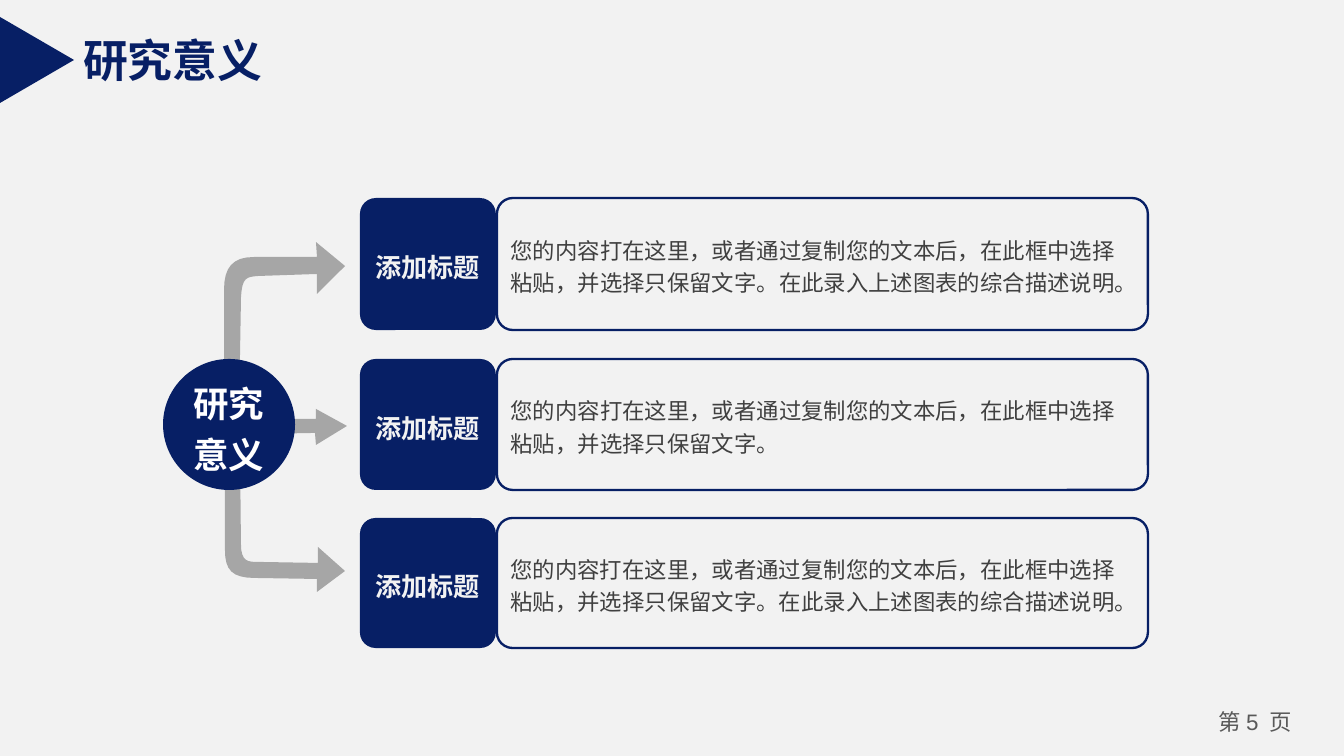
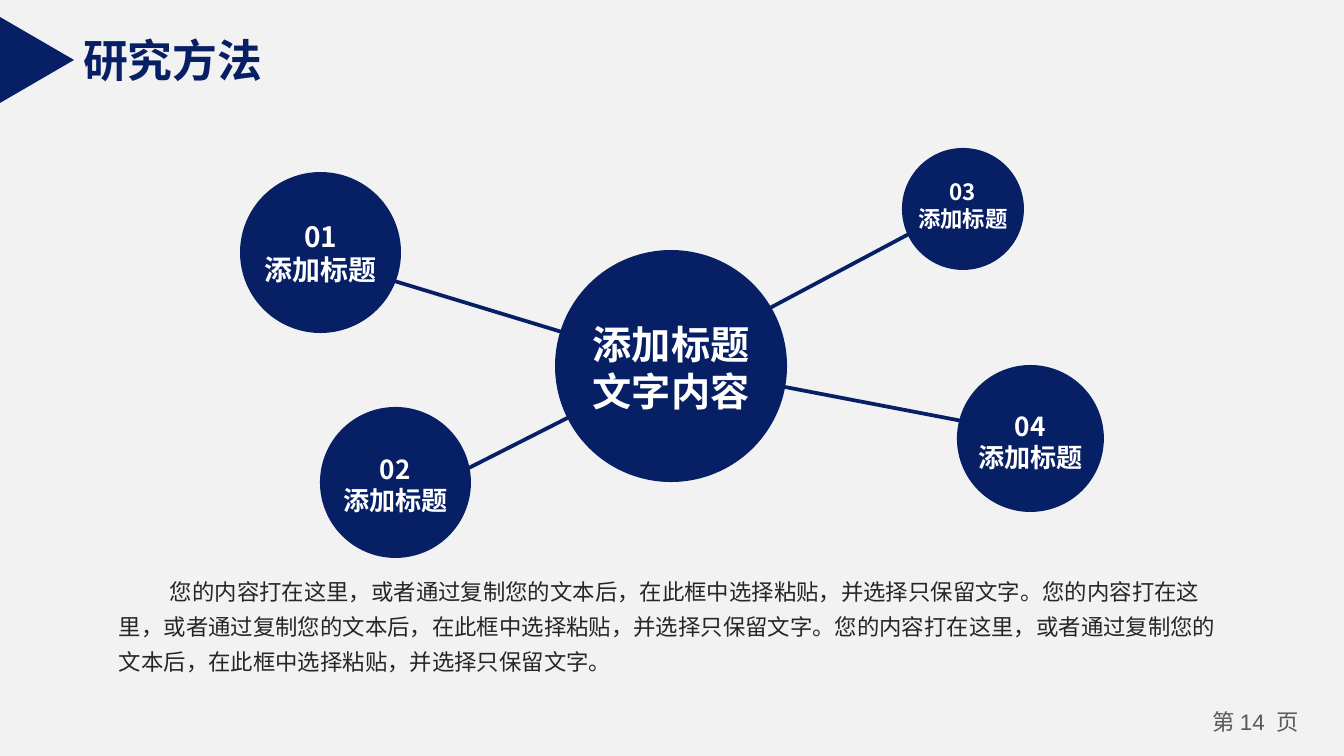
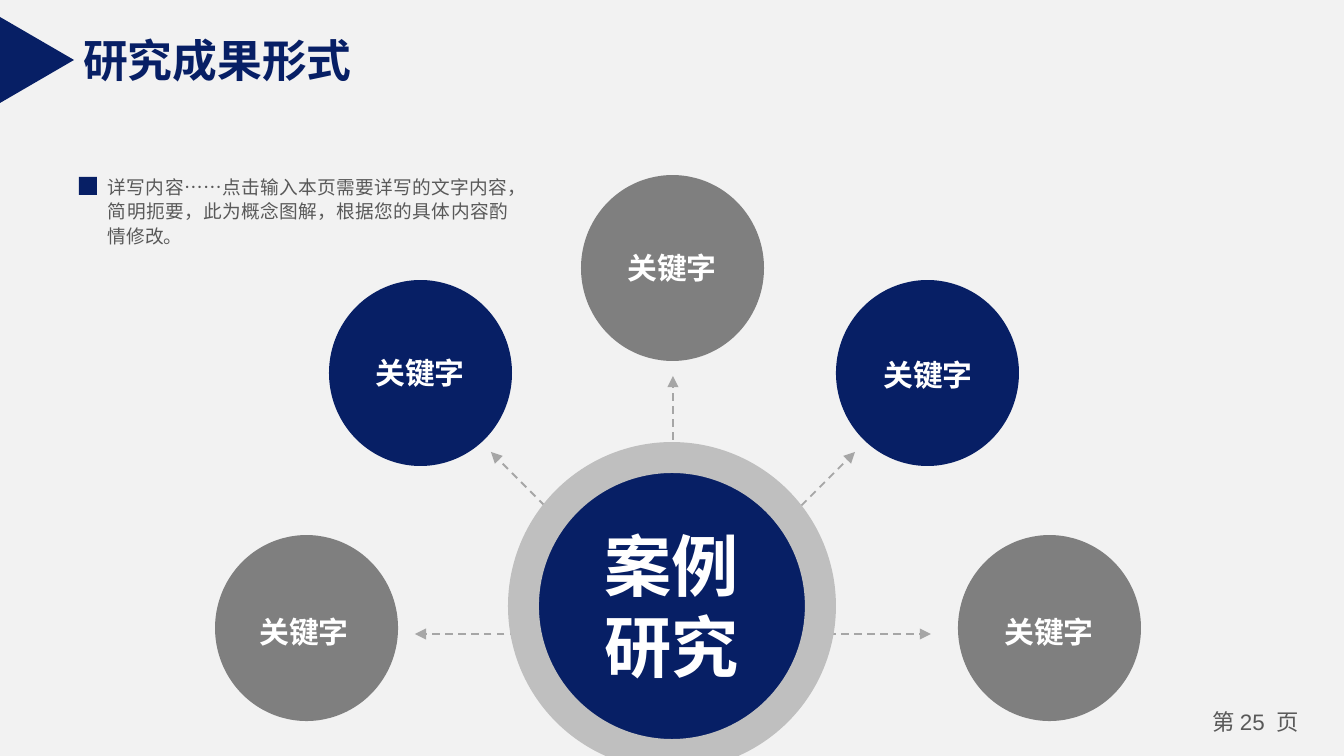
from dataclasses import dataclass

from lxml.etree import SubElement
from pptx import Presentation
from pptx.dml.color import RGBColor
from pptx.enum.dml import MSO_LINE
from pptx.enum.shapes import MSO_CONNECTOR, MSO_SHAPE
from pptx.enum.text import MSO_ANCHOR, MSO_AUTO_SIZE, PP_ALIGN
from pptx.oxml.ns import qn
from pptx.util import Pt

PX = 6804  # EMU in one px


@dataclass(frozen=True)
class Theme:
    navy = RGBColor.from_string("071F65")
    paper = RGBColor.from_string("F2F2F2")
    white = RGBColor.from_string("FFFFFF")
    ring = RGBColor.from_string("BFBFBF")
    arrow = RGBColor.from_string("A6A6A6")
    gray = RGBColor.from_string("7F7F7F")
    note = RGBColor.from_string("595959")
    body = RGBColor.from_string("404040")
    ink = RGBColor.from_string("262626")
    sans = "Noto Sans CJK SC"
    latin = "Arial"
    title = 24
    small = 10
    text = 12
    tag = 14
    topic = 15
    key = 16
    core = 19
    hub = 21
    big = 36


T = Theme()


def draw(slide, kind, box, fill=None, line=None):
    """Add a preset shape, or a text box when kind is None."""
    left, top, width, height = (n * PX for n in box)
    if kind is None:
        return slide.shapes.add_textbox(left, top, width, height)
    shape = slide.shapes.add_shape(kind, left, top, width, height)
    shape.shadow.inherit = False
    if fill is None:
        shape.fill.background()
    else:
        shape.fill.solid()
        shape.fill.fore_color.rgb = fill
    if line is None:
        shape.line.fill.background()
    else:
        shape.line.color.rgb = line
        shape.line.width = Pt(1.25)
    return shape


def write(shape, text, size, color, bold=False, align=PP_ALIGN.CENTER, space=1.0,
          font=T.sans, pad=(9, 4), wrap=True, anchor=MSO_ANCHOR.MIDDLE):
    frame = shape.text_frame
    frame.text = text
    frame.word_wrap = wrap
    frame.auto_size = MSO_AUTO_SIZE.NONE
    frame.vertical_anchor = anchor
    frame.margin_left = frame.margin_right = pad[0] * PX
    frame.margin_top = frame.margin_bottom = pad[1] * PX
    for para in frame.paragraphs:
        para.alignment = align
        para.line_spacing = space
        para.font.size = Pt(size)
        para.font.bold = bold
        para.font.color.rgb = color
        para.font.name = font
        props = para._p.pPr.find(qn("a:defRPr"))
        SubElement(props, qn("a:ea"), typeface=T.sans)
    return frame.paragraphs[0]


prs = Presentation()
prs.slide_width, prs.slide_height = 1344 * PX, 756 * PX
back = prs.slide_master.background.fill
back.solid()
back.fore_color.rgb = T.paper
layout = prs.slide_layouts[5]
head = layout.placeholders[0]
head.left, head.top, head.width, head.height = 70 * PX, 26 * PX, 300 * PX, 67 * PX

# Title, marker and page number of every slide
slides = []
for name, page in (("研究意义", 5), ("研究方法", 14), ("研究成果形式", 25)):
    slide = prs.slides.add_slide(layout)
    slides.append(slide)
    write(slide.shapes.title, name, T.title, T.navy, True, PP_ALIGN.LEFT,
          font=T.latin, pad=(13, 7), wrap=False)
    mark = draw(slide, MSO_SHAPE.ISOSCELES_TRIANGLE, (-6, 23, 86, 74), T.navy)
    mark.rotation = 90
    foot = write(draw(slide, None, (1195, 704, 121, 40)), "第 ", T.text, T.note,
                 anchor=MSO_ANCHOR.TOP)
    digits = foot.add_run()
    digits.text = f"{page} "
    digits.font.name = T.latin
    foot.add_run().text = " 页"
means, ways, fruits = slides

# Lines of the second and third slides, behind their circles
spokes = [(368, 273, 667, 364), (453, 476, 668, 367),
          (659, 367, 939, 218), (665, 364, 1030, 434)]
rays = [(673, 634, x, y) for x, y in
        ((415, 634), (931, 634), (673, 376), (491, 452), (855, 452))]
for slide, ends, color, width, dashed in ((ways, spokes, T.navy, 2, False),
                                          (fruits, rays, T.arrow, 1, True)):
    for end in ends:
        link = slide.shapes.add_connector(MSO_CONNECTOR.STRAIGHT, *(n * PX for n in end))
        link.line.color.rgb = color
        link.line.width = Pt(width)
        if dashed:
            link.line.dash_style = MSO_LINE.DASH
            SubElement(link.line._get_or_add_ln(), qn("a:tailEnd"), type="triangle")
        SubElement(link._element.spPr, qn("a:effectLst"))

# Slide 1: arrows; a step of two numbers is a corner, of six a Bezier curve
down = [(240, 445), (241, 544), (241, 562, 248, 562, 259, 562), (318, 563), (318, 547),
        (345, 571), (317, 592), (317, 579), (255, 578), (232, 578, 225, 570, 225, 550),
        (225, 442), (226, 425, 236, 426, 240, 445)]
ahead = [(203, 435), (315, 433), (316, 445), (347, 426), (316, 409), (316, 419), (203, 419)]
up = [(239, 413), (241, 297), (242, 277, 247, 277, 258, 276), (317, 274), (317, 294),
      (345, 266), (316, 242), (317, 257), (254, 257), (233, 257, 224, 267, 224, 290),
      (224, 415), (227, 435, 237, 434, 239, 413)]
for steps in (down, ahead, up):
    dots = []
    for step in steps:
        if len(step) == 2:
            dots.append(step)
            continue
        (ax, ay), (bx, by, cx, cy, dx, dy) = dots[-1], step
        for i in range(1, 9):
            t = i / 8
            s = 1 - t
            a, b, c, d = s ** 3, 3 * s * s * t, 3 * s * t * t, t ** 3
            dots.append((a * ax + b * bx + c * cx + d * dx,
                         a * ay + b * by + c * cy + d * dy))
    dots = [(round(x * PX), round(y * PX)) for x, y in dots]
    path = means.shapes.build_freeform(*dots[0])
    path.add_line_segments(dots[1:], close=True)
    arrow = path.convert_to_shape()
    arrow.shadow.inherit = False
    arrow.fill.solid()
    arrow.fill.fore_color.rgb = T.arrow
    arrow.line.fill.background()

brief = "您的内容打在这里，或者通过复制您的文本后，在此框中选择粘贴，并选择只保留文字。"
full = brief + "在此录入上述图表的综合描述说明。"
for top, high, text in ((198, 132, full), (359, 131, brief), (518, 130, full)):
    panel = draw(means, MSO_SHAPE.ROUNDED_RECTANGLE, (497, top, 651, high), line=T.navy)
    panel.adjustments[0] = 0.12
    write(panel, text, T.text, T.body, align=PP_ALIGN.LEFT, space=1.2)
    tag = draw(means, MSO_SHAPE.ROUNDED_RECTANGLE, (360, top, 136, high), T.navy)
    tag.adjustments[0] = 0.12
    write(tag, "添加标题", T.tag, T.paper, True, space=1.2)
core = draw(means, MSO_SHAPE.OVAL, (163, 359, 132, 131), T.navy)
write(core, "研究意义", T.core, T.white, True, space=1.2, font=T.latin)

# Slide 2: hub with four topics
story = write(draw(ways, None, (110, 566, 1116, 116)), brief * 3, T.text, T.ink,
              align=PP_ALIGN.LEFT, space=1.3, anchor=MSO_ANCHOR.TOP)
story._p.pPr.set("indent", str(51 * PX))
for left, top, size, low, high, text, points in (
        (555, 250, 232, 313, 109, "添加标题\n文字内容", T.hub),
        (902, 148, 122, 172, 67, "03\n添加标题", T.text),
        (240, 172, 161, 212, 82, "01\n添加标题", T.topic),
        (957, 365, 147, 403, 77, "04\n添加标题", T.tag),
        (320, 407, 151, 446, 77, "02\n添加标题", T.tag)):
    draw(ways, MSO_SHAPE.OVAL, (left, top, size, size), T.navy)
    write(draw(ways, None, (left, low, size, high)), text, points, T.white, True)

# Slide 3: case study with five keywords
draw(fruits, MSO_SHAPE.OVAL, (534, 469, 275, 275), T.navy)
ring = draw(fruits, MSO_SHAPE.DONUT, (508, 442, 328, 328), T.ring)
ring.adjustments[0] = 31 / 328
write(draw(fruits, None, (585, 517, 173, 176)), "案例研究", T.big, T.white, True)
for left, top, side, low, fill in ((215, 535, 239, 606, T.gray), (329, 280, 355, 347, T.navy),
                                   (581, 175, 607, 242, T.gray), (836, 280, 863, 349, T.navy),
                                   (958, 535, 984, 606, T.gray)):
    draw(fruits, MSO_SHAPE.OVAL, (left, top, 183, 186), fill)
    write(draw(fruits, None, (side, low, 130, 52)), "关键字", T.key, T.white, True)
write(draw(fruits, None, (108, 174, 400, 74)),
      "详写内容……点击输入本页需要详写的文字内容，简明扼要，此为概念图解，根据您的具体内容酌情修改。",
      T.small, T.note, align=PP_ALIGN.JUSTIFY, space=Pt(13), pad=(0, 0),
      anchor=MSO_ANCHOR.TOP)
draw(fruits, MSO_SHAPE.RECTANGLE, (79, 177, 18, 18), T.navy)

prs.save("out.pptx")
